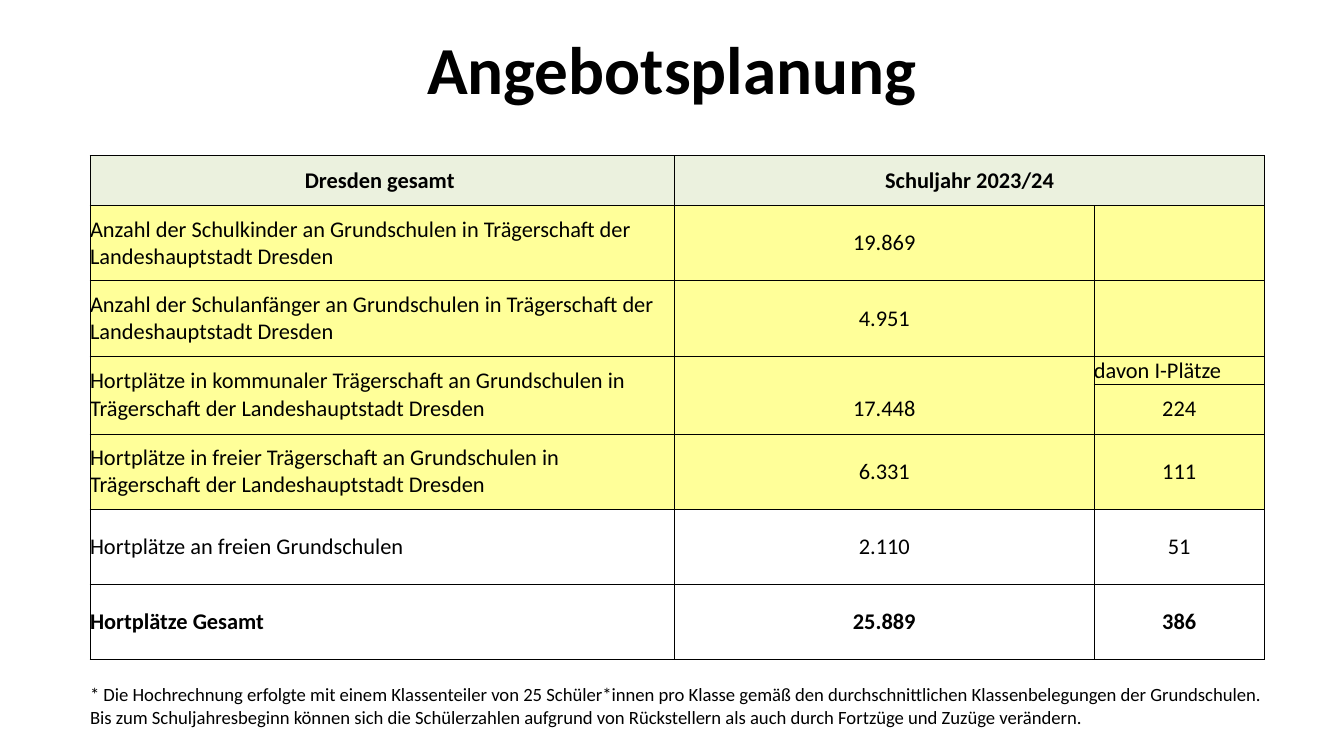
"""Build the slide on after-school care places as one table with a footnote."""
from lxml.etree import SubElement
from pptx import Presentation
from pptx.dml.color import RGBColor
from pptx.enum.text import MSO_ANCHOR, PP_ALIGN
from pptx.oxml.ns import qn
from pptx.util import Inches, Pt

COLORS = {"ink": "000000", "head": "EBF1DE", "mark": "FFFF99"}
FONT = "Calibri"
TITLE = "Angebotsplanung"
CITY = "Trägerschaft der Landeshauptstadt Dresden"
NOTE = (
    "* Die Hochrechnung erfolgte mit einem Klassenteiler von 25 Schüler*innen pro Klasse "
    "gemäß den durchschnittlichen Klassenbelegungen der Grundschulen. Bis zum "
    "Schuljahresbeginn können sich die Schülerzahlen aufgrund von Rückstellern als auch "
    "durch Fortzüge und Zuzüge verändern."
)
COLS = [4.35, 3.12, 1.27]
ROWS = [
    (0.37, "head", ["Dresden gesamt ", "Schuljahr 2023/24", ""]),
    (0.56, "mark", [f"Anzahl der Schulkinder an Grundschulen in {CITY}", "19.869", ""]),
    (0.56, "mark", [f"Anzahl der Schulanfänger an Grundschulen in {CITY}", "4.951", ""]),
    (0.21, "mark", [f"Hortplätze in kommunaler Trägerschaft an Grundschulen in {CITY}",
                    "", "davon I-Plätze"]),
    (0.37, "mark", ["", "17.448", "224"]),
    (0.56, "mark", [f"Hortplätze in freier Trägerschaft an Grundschulen in {CITY}",
                    "6.331", "111"]),
    (0.56, None, ["Hortplätze an freien Grundschulen", "2.110", "51"]),
    (0.56, None, ["Hortplätze Gesamt", "25.889", "386"]),
    (0.18, None, ["", "", ""]),
    (0.33, None, [NOTE, "", ""]),
]
HEAD, SPLIT, TOTAL, GAP, LAST = 0, 3, 7, 8, 9
SPANS = [((HEAD, 1), (HEAD, 2)), ((SPLIT, 0), (SPLIT + 1, 0)),
         ((GAP, 0), (GAP, 1)), ((LAST, 0), (LAST, 2))]
SIDES = {(SPLIT, 1): "LRT", (SPLIT + 1, 1): "LRB"}


def rgb(name):
    return RGBColor.from_string(COLORS[name])


def style(para, size, bold, align):
    para.alignment = align
    for run in para.runs:
        font = run.font
        font.name, font.size, font.bold = FONT, Pt(size), bold
        font.color.rgb = rgb("ink")
    if not para.runs:
        SubElement(para._p, qn("a:endParaRPr"), sz=str(size * 100))


def border(cell, sides):
    props = cell._tc.get_or_add_tcPr()
    for side in "LRTB":
        line = SubElement(props, qn(f"a:ln{side}"), w=str(Pt(0.5)))
        if side in sides:
            fill = SubElement(line, qn("a:solidFill"))
            SubElement(fill, qn("a:srgbClr"), val=COLORS["ink"])
        else:
            SubElement(line, qn("a:noFill"))


def add_title(slide):
    box = slide.shapes.add_textbox(Inches(0.5), Inches(0.03), Inches(9), Inches(0.94))
    frame = box.text_frame
    frame.word_wrap = True
    frame.vertical_anchor = MSO_ANCHOR.MIDDLE
    frame.text = TITLE
    style(frame.paragraphs[0], 36, True, PP_ALIGN.CENTER)


def fill_cell(cell, row, col, text, color):
    cell.margin_left = cell.margin_right = cell.margin_top = cell.margin_bottom = 0
    if row == LAST:
        cell.vertical_anchor = MSO_ANCHOR.TOP
    elif (row, col) == (SPLIT, 2):
        cell.vertical_anchor = MSO_ANCHOR.BOTTOM
    else:
        cell.vertical_anchor = MSO_ANCHOR.MIDDLE
    cell.text_frame.text = text
    left = row != HEAD and (col == 0 or row == SPLIT)
    style(cell.text_frame.paragraphs[0], 10 if row >= GAP else 12,
          row in (HEAD, TOTAL), PP_ALIGN.LEFT if left else PP_ALIGN.CENTER)
    edge = "T" if row == GAP else "" if row == LAST else "LRTB"
    border(cell, SIDES.get((row, col), edge))
    if color:
        cell.fill.solid()
        cell.fill.fore_color.rgb = rgb(color)
    else:
        cell.fill.background()


def add_grid(slide):
    high = sum(row[0] for row in ROWS)
    frame = slide.shapes.add_table(len(ROWS), len(COLS), Inches(0.67), Inches(1.16),
                                   Inches(sum(COLS)), Inches(high))
    table = frame.table
    table.first_row = table.horz_banding = False
    for col, width in enumerate(COLS):
        table.columns[col].width = Inches(width)
    for row, (height, color, texts) in enumerate(ROWS):
        table.rows[row].height = Inches(height)
        for col, text in enumerate(texts):
            fill_cell(table.cell(row, col), row, col, text, color)
    for start, end in SPANS:
        table.cell(*start).merge(table.cell(*end))


def main():
    deck = Presentation()
    deck.slide_width = Inches(10)
    deck.slide_height = deck.slide_width * 9 // 16
    slide = deck.slides.add_slide(deck.slide_layouts[6])
    add_title(slide)
    add_grid(slide)
    deck.save("out.pptx")


if __name__ == "__main__":
    main()
